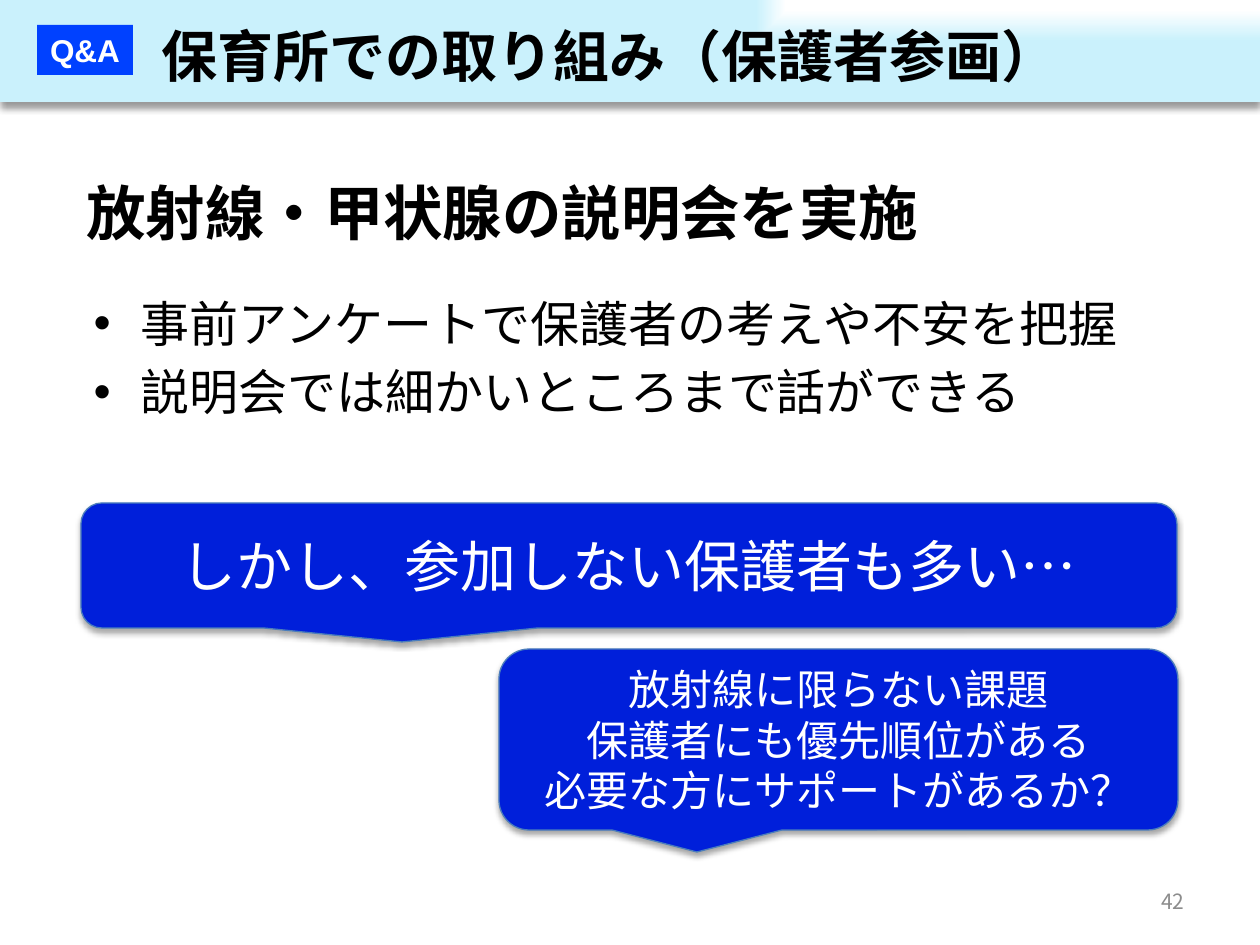
from lxml.etree import SubElement
from pptx import Presentation
from pptx.dml.color import RGBColor
from pptx.enum.shapes import MSO_SHAPE
from pptx.enum.text import MSO_ANCHOR, PP_ALIGN
from pptx.oxml import parse_xml
from pptx.oxml.ns import nsdecls, qn
from pptx.util import Pt

WHITE = RGBColor(0xFF, 0xFF, 0xFF)
BLACK = RGBColor(0, 0, 0)
GRAY = RGBColor(0x8C, 0x8C, 0x8C)
PALE_CYAN = RGBColor(0xCA, 0xF1, 0xFC)
BADGE_BLUE = RGBColor(0x00, 0x41, 0xFF)
CALLOUT_BLUE = RGBColor(0x00, 0x1F, 0xDA)
OUTLINE_BLUE = RGBColor(0x4B, 0x7E, 0xBC)
JAPANESE_FONT = "Noto Sans CJK JP"
EMU_PER_PX = 914400 / 126


def emu(px):
    return round(px * EMU_PER_PX)


class SlideBuilder:
    def __init__(self, presentation):
        self.slide = presentation.slides.add_slide(presentation.slide_layouts[1])

    def place(self, shape, box):
        shape.left, shape.top, shape.width, shape.height = map(emu, box)

    def set_text(self, shape, lines, size, color, align=PP_ALIGN.LEFT, bold=False,
                 font=JAPANESE_FONT, anchor=MSO_ANCHOR.MIDDLE, wrap=True):
        frame = shape.text_frame
        frame.text = "\n".join(lines)
        frame.word_wrap = wrap
        frame.vertical_anchor = anchor
        for paragraph in frame.paragraphs:
            paragraph.alignment = align
            paragraph.font.size = Pt(size)
            paragraph.font.bold = bold
            paragraph.font.color.rgb = color
            paragraph.font.name = font
            properties = paragraph._p.get_or_add_pPr().get_or_add_defRPr()
            SubElement(properties, qn("a:ea"), typeface=JAPANESE_FONT)

    def shadow(self, shape, opacity, blur, distance):
        shape._element.spPr.append(parse_xml(
            f'<a:effectLst {nsdecls("a")}><a:outerShdw blurRad="{Pt(blur)}" '
            f'dist="{Pt(distance)}" dir="5400000" rotWithShape="0">'
            f'<a:srgbClr val="{BLACK}"><a:alpha val="{opacity * 1000}"/></a:srgbClr>'
            '</a:outerShdw></a:effectLst>'))

    def shape(self, kind, box, color):
        shape = self.slide.shapes.add_shape(kind, *map(emu, box))
        shape.fill.solid()
        shape.fill.fore_color.rgb = color
        shape.line.fill.background()
        return shape

    def header_band(self, box):
        band = self.shape(MSO_SHAPE.RECTANGLE, box, PALE_CYAN)
        properties = band._element.spPr
        properties.replace(properties.find(qn("a:solidFill")), parse_xml(
            f'<a:gradFill {nsdecls("a")} rotWithShape="1"><a:gsLst>'
            f'<a:gs pos="20000"><a:srgbClr val="{WHITE}"/></a:gs>'
            f'<a:gs pos="80000"><a:srgbClr val="{PALE_CYAN}"/></a:gs></a:gsLst>'
            '<a:path path="rect"><a:fillToRect l="100000" b="100000"/></a:path>'
            '</a:gradFill>'))
        self.shadow(band, 40, 4, 3)

    def badge(self, box, text):
        badge = self.shape(MSO_SHAPE.RECTANGLE, box, BADGE_BLUE)
        badge.shadow.inherit = False
        self.set_text(badge, [text], 18, WHITE, PP_ALIGN.CENTER, True, "Arial", wrap=False)

    def callout(self, box, tip, lines, size):
        callout = self.shape(MSO_SHAPE.ROUNDED_RECTANGULAR_CALLOUT, box, CALLOUT_BLUE)
        callout.line.color.rgb = OUTLINE_BLUE
        callout.line.width = Pt(0.75)
        left, top, width, height = box
        callout.adjustments[0] = (tip[0] - left) / width - 0.5
        callout.adjustments[1] = (tip[1] - top) / height - 0.5
        self.shadow(callout, 35, 3.1, 1.8)
        self.set_text(callout, lines, size, WHITE, PP_ALIGN.CENTER)

    def title(self, box, text):
        title = self.slide.shapes.title
        self.place(title, box)
        self.set_text(title, [text], 32, BLACK, bold=True, font="Arial", wrap=False)
        self.slide.shapes._spTree.append(title._element)

    def body(self, box, lines):
        body = self.slide.placeholders[1]
        self.place(body, box)
        self.set_text(body, lines, 28, BLACK, anchor=MSO_ANCHOR.TOP)

    def text(self, box, text, size, color, align=PP_ALIGN.LEFT, bold=False):
        text_box = self.slide.shapes.add_textbox(*map(emu, box))
        self.set_text(text_box, [text], size, color, align, bold)


def main():
    presentation = Presentation()
    presentation.slide_width, presentation.slide_height = emu(1260), emu(945)
    builder = SlideBuilder(presentation)
    builder.header_band((0, 0, 1260, 102))
    builder.badge((37, 25, 96, 50), "Q&A")
    builder.title((149, 15, 930, 81), "保育所での取り組み（保護者参画）")
    builder.text((74, 149, 1131, 126), "放射線・甲状腺の説明会を実施", 34, BLACK, bold=True)
    builder.body((81, 287, 1085, 252), [
        "事前アンケートで保護者の考えや不安を把握",
        "説明会では細かいところまで話ができる",
    ])
    builder.callout((81, 503, 1096, 125), (402, 642),
                    ["しかし、参加しない保護者も多い…"], 32)
    builder.callout((499, 649, 679, 181), (697, 852), [
        "放射線に限らない課題",
        "保護者にも優先順位がある",
        "必要な方にサポートがあるか？",
    ], 24)
    builder.text((903, 876, 294, 50), "42", 12, GRAY, PP_ALIGN.RIGHT)
    presentation.save("out.pptx")


if __name__ == "__main__":
    main()
